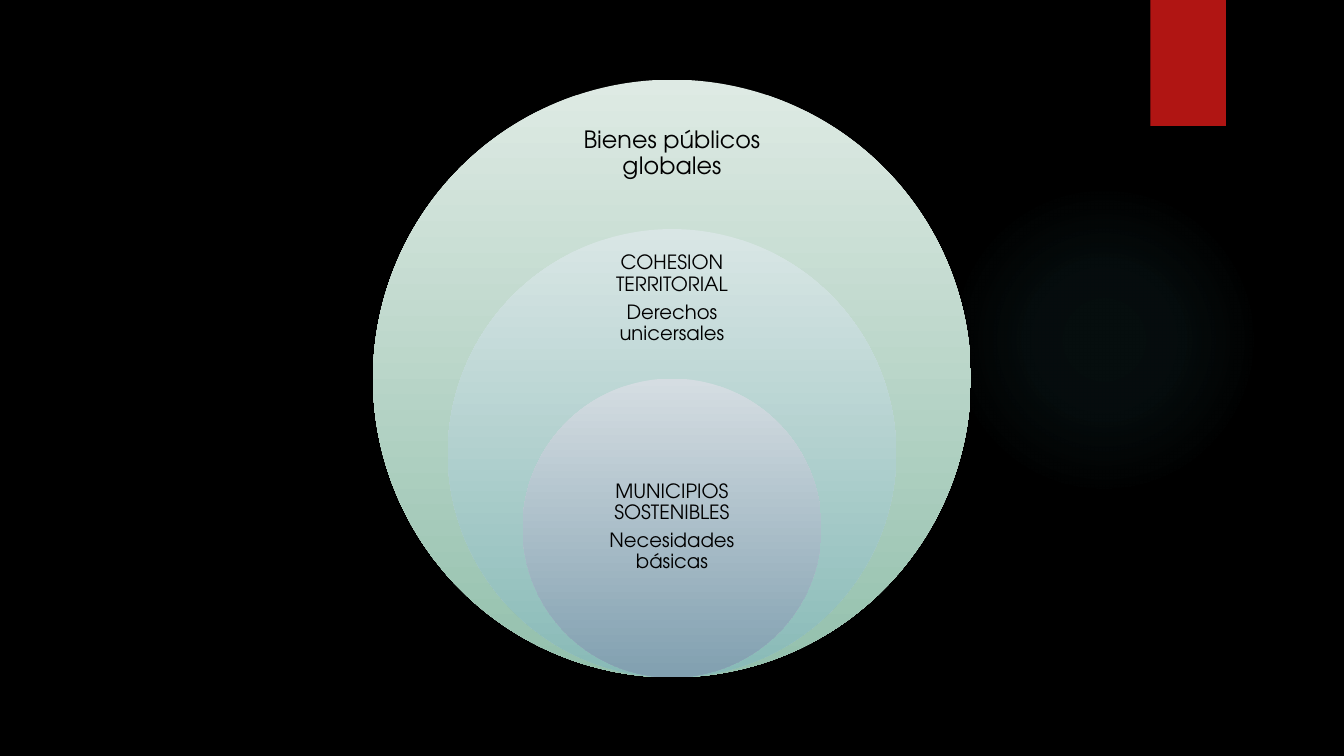
from dataclasses import dataclass

from lxml import etree
from pptx import Presentation
from pptx.dml.color import RGBColor
from pptx.enum.shapes import MSO_SHAPE
from pptx.enum.text import MSO_ANCHOR, PP_ALIGN
from pptx.oxml.ns import qn
from pptx.util import Inches, Pt

OVAL, RECT = MSO_SHAPE.OVAL, MSO_SHAPE.RECTANGLE
MIDDLE, CENTER = MSO_ANCHOR.MIDDLE, PP_ALIGN.CENTER
BLANK_LAYOUT = 6


@dataclass(frozen=True)
class Theme:
    font: str = "TeX Gyre Adventor"
    background: str = "000000"
    text: str = "000000"
    ribbon: str = "B01513"
    glow: str = "50B9C1"
    outer: tuple = ("DEEAE4", "93C0AC")
    middle: tuple = ("D9E6E5", "88BAB7")
    inner: tuple = ("D5DDE2", "81A0B0")
    large: int = 17
    small: int = 14


THEME = Theme()
SLIDE_W, SLIDE_H = 13.33, 7.5
CENTER_X = SLIDE_W / 2
DIAMETER = 5.93   # outer circle
BASE_Y = 6.72     # all circles touch here

# Share of the outer diameter, gradient, type size, inset,
# label top, width and height, paragraphs
RINGS = [
    (1, THEME.outer, THEME.large, 0.13, (1.08, 2.07, 0.89),
     ["Bienes públicos globales"]),
    (0.75, THEME.middle, THEME.small, 0.11, (2.55, 2.07, 0.83),
     ["COHESION TERRITORIAL", "Derechos unicersales"]),
    (0.5, THEME.inner, THEME.small, 0.11, (4.49, 2.1, 1.48),
     ["MUNICIPIOS SOSTENIBLES", "Necesidades básicas"]),
]


def add_plain_shape(s, kind, x, y, w, h):
    sp = s.shapes.add_shape(kind, Inches(x), Inches(y), Inches(w), Inches(h))
    sp.shadow.inherit = False
    sp.line.fill.background()
    return sp


def fill_gradient(sp, stops, radial=False):
    """Fill from (position %, colour, opacity %) stops, downward or radial."""
    sp.fill.gradient()
    grad = sp.element.spPr.find(qn("a:gradFill"))
    for child in list(grad):
        grad.remove(child)
    stop_list = etree.SubElement(grad, qn("a:gsLst"))
    for position, color, opacity in stops:
        gs = etree.SubElement(stop_list, qn("a:gs"), pos=str(position * 1000))
        clr = etree.SubElement(gs, qn("a:srgbClr"), val=color)
        if opacity < 100:
            etree.SubElement(clr, qn("a:alpha"), val=str(opacity * 1000))
    if radial:
        shade = etree.SubElement(grad, qn("a:path"), path="circle")
        etree.SubElement(shade, qn("a:fillToRect"),
                         dict.fromkeys("ltrb", "50000"))
    else:
        etree.SubElement(grad, qn("a:lin"), ang="5400000", scaled="0")


def add_label(s, top, width, height, inset, size, lines):
    box = s.shapes.add_textbox(Inches(CENTER_X - width / 2), Inches(top),
                               Inches(width), Inches(height))
    tf = box.text_frame
    tf.word_wrap = True
    tf.vertical_anchor = MIDDLE
    tf.margin_left = tf.margin_right = Inches(inset)
    tf.margin_top = tf.margin_bottom = Inches(inset)
    for i, line in enumerate(lines):
        p = tf.add_paragraph() if i else tf.paragraphs[0]
        p.alignment = CENTER
        p.line_spacing = 0.9
        p.space_after = Pt(round(size * 0.35))
        r = p.add_run()
        r.text = line
        r.font.name = THEME.font
        r.font.size = Pt(size)
        r.font.color.rgb = RGBColor.from_string(THEME.text)


def add_ring(s, share, colors, size, inset, label, lines):
    d = DIAMETER * share
    sp = add_plain_shape(s, OVAL, CENTER_X - d / 2, BASE_Y - d, d, d)
    fill_gradient(sp, [(0, colors[0], 100), (100, colors[1], 100)])
    add_label(s, *label, inset, size, lines)


def add_backdrop(s):
    fill = s.background.fill
    fill.solid()
    fill.fore_color.rgb = RGBColor.from_string(THEME.background)
    glow = add_plain_shape(s, OVAL, 9.41, 1.83, 3.08, 3.08)
    fill_gradient(glow, [(0, THEME.glow, 7), (36, THEME.glow, 6),
                         (69, THEME.glow, 0)], radial=True)
    ribbon = add_plain_shape(s, RECT, 11.41, 0, 0.75, SLIDE_H / 6)
    ribbon.fill.solid()
    ribbon.fill.fore_color.rgb = RGBColor.from_string(THEME.ribbon)


def main():
    prs = Presentation()
    prs.slide_width, prs.slide_height = Inches(SLIDE_W), Inches(SLIDE_H)
    s = prs.slides.add_slide(prs.slide_layouts[BLANK_LAYOUT])
    add_backdrop(s)
    # Nested circles, largest first
    for ring in RINGS:
        add_ring(s, *ring)
    prs.save("out.pptx")


if __name__ == "__main__":
    main()
